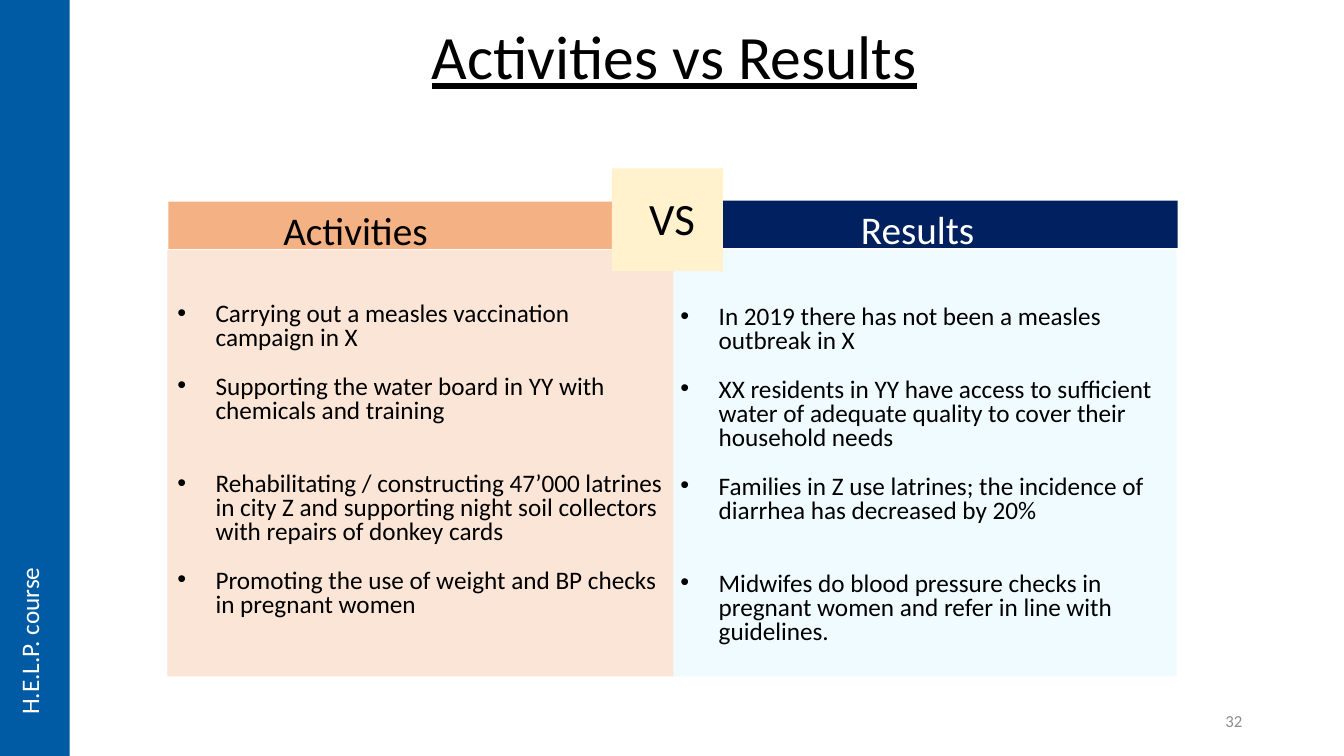
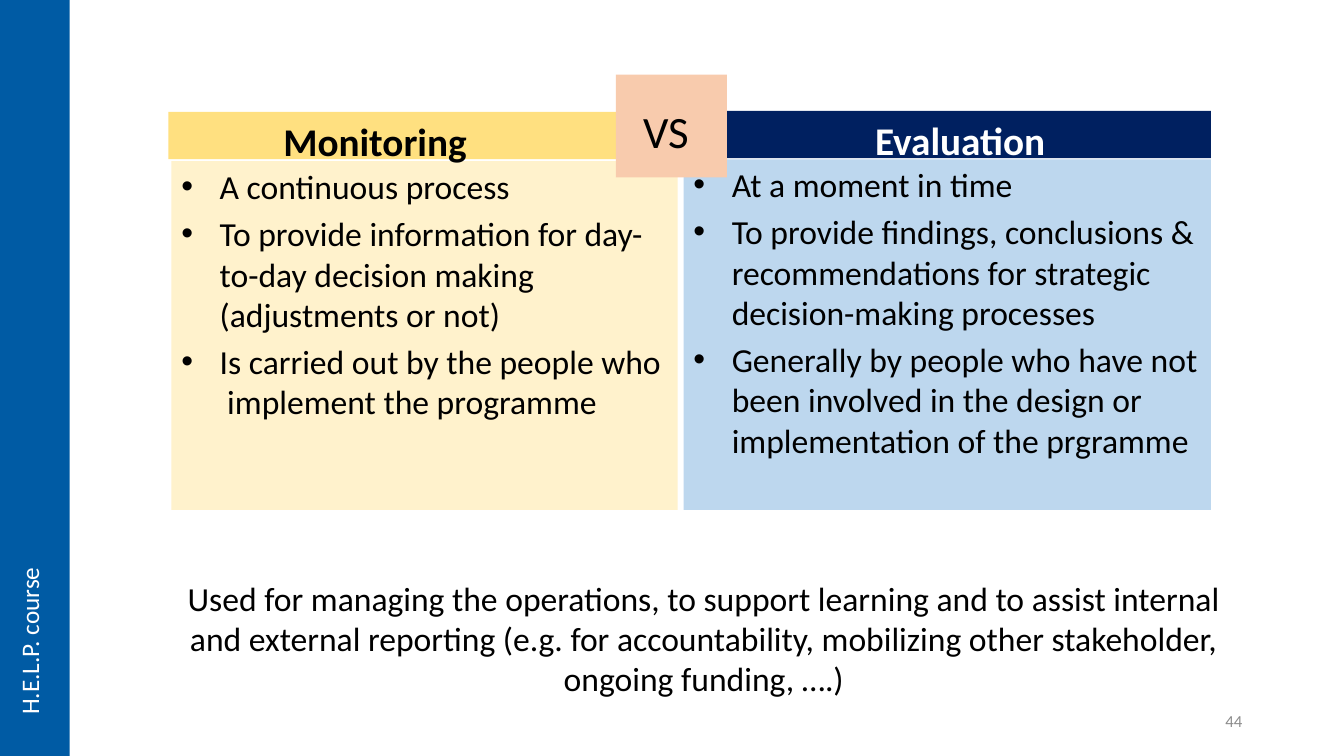
from lxml.etree import SubElement
from pptx import Presentation
from pptx.dml.color import RGBColor
from pptx.enum.shapes import MSO_SHAPE
from pptx.enum.text import MSO_ANCHOR, PP_ALIGN
from pptx.oxml.ns import qn
from pptx.util import Inches, Pt

WIDTH, HEIGHT = 13.33, 7.5
BLACK, WHITE, GREY = "000000", "FFFFFF", "8C8C8C"
BAND, NAVY = "005BA4", "002060"
FONT = "Calibri"
COURSE = "H.E.L.P. course"
HEADING_HEIGHT = 0.47
INDENT = 0.38
BADGE_SIZE = (1.1, 1.02)
BADGE_TEXT_SIZE = (0.66, 0.64)

SLIDES = [
    {
        "title": "Activities vs Results",
        "number": "32",
        "body": {"size": 18, "line_spacing": 0.8},
        "bold": False,
        "badge": {"at": (6.07, 1.67), "text_at": (6.34, 1.84), "fill": "FFF2CC"},
        "columns": [
            {
                "heading": ("Activities", (1.67, 2, 5), 1.14, "F4B183", BLACK),
                "panel": ((1.66, 2.48, 5.02, 4.23), "FBE5D6", 0.53),
                "items": [
                    ("Carrying out a measles vaccination campaign in X", 0),
                    ("Supporting the water board in YY with chemicals and training", 17.4),
                    ("Rehabilitating / constructing 47’000 latrines in city Z and supporting "
                     "night soil collectors with repairs of donkey cards", 34.8),
                    ("Promoting the use of weight and BP checks in pregnant women", 17.4),
                ],
            },
            {
                "heading": ("Results", (6.68, 1.99, 5), 1.86, NAVY, WHITE),
                "panel": ((6.65, 2.48, 5.02, 4.23), "EFFBFF", 0.56),
                "items": [
                    ("In 2019 there has not been a measles outbreak in X", 0),
                    ("XX residents in YY have access to sufficient water of adequate "
                     "quality to cover their household needs", 17.4),
                    ("Families in Z use latrines; the incidence of diarrhea has decreased by 20%", 17.4),
                    ("Midwifes do blood pressure checks in pregnant women and refer "
                     "in line with guidelines.", 34.8),
                ],
            },
        ],
    },
    {
        "number": "44",
        "body": {"size": 24, "line_spacing": 1.0},
        "bold": True,
        "badge": {"at": (6.11, 0.74), "text_at": (6.28, 0.98), "fill": "F8CBAD"},
        "columns": [
            {
                "heading": ("Monitoring", (1.67, 1.11, 5), 1.14, "FFE080", BLACK),
                "panel": ((1.7, 1.6, 5.02, 3.46), "FFF2CC", 0.05),
                "items": [
                    ("A continuous process", 0),
                    ("To provide information for day-to-day decision making (adjustments or not)", 4.8),
                    ("Is carried out by the people who  implement the programme", 4.8),
                ],
            },
            {
                "heading": ("Evaluation", (6.82, 1.1, 5.19), 1.86, NAVY, WHITE),
                "panel": ((6.78, 1.58, 5.23, 3.48), "BDD7EE", 0.05),
                "items": [
                    ("At a moment in time", 0),
                    ("To provide findings, conclusions & recommendations for strategic "
                     "decision-making processes", 4.8),
                    ("Generally by people who have not been involved in the design or "
                     "implementation of the prgramme", 4.8),
                ],
            },
        ],
        "summary": "Used for managing the operations, to support learning and to assist internal "
                   "and external reporting (e.g. for accountability, mobilizing other stakeholder, "
                   "ongoing funding, ….)",
    },
]


def color(value):
    return RGBColor.from_string(value)


def add_rectangle(slide, box, fill):
    shape = slide.shapes.add_shape(MSO_SHAPE.RECTANGLE, *map(Inches, box))
    shape.shadow.inherit = False
    shape.fill.solid()
    shape.fill.fore_color.rgb = color(fill)
    shape.line.fill.background()
    shape.text_frame.vertical_anchor = MSO_ANCHOR.TOP
    return shape


def write(paragraph, text, size, font_color=BLACK, align=PP_ALIGN.LEFT, bold=False, underline=False):
    paragraph.alignment = align
    run = paragraph.add_run()
    run.text = text
    run.font.name = FONT
    run.font.size = Pt(size)
    run.font.bold = bold
    run.font.underline = underline
    run.font.color.rgb = color(font_color)


def add_text(slide, box, text, size, wrap=True, anchor=MSO_ANCHOR.TOP, **style):
    frame = slide.shapes.add_textbox(*map(Inches, box)).text_frame
    frame.word_wrap = wrap
    frame.vertical_anchor = anchor
    write(frame.paragraphs[0], text, size, **style)
    return frame


def add_bullet(paragraph):
    properties = paragraph._p.get_or_add_pPr()
    properties.set("marL", str(Inches(INDENT)))
    properties.set("indent", str(-Inches(INDENT)))
    SubElement(properties, qn("a:buFont")).set("typeface", "Arial")
    SubElement(properties, qn("a:buChar")).set("char", "•")


def add_panel(slide, column, body):
    box, fill, top_margin = column["panel"]
    frame = add_rectangle(slide, box, fill).text_frame
    frame.word_wrap = True
    frame.margin_top = Inches(top_margin)
    for index, (text, gap) in enumerate(column["items"]):
        paragraph = frame.add_paragraph() if index else frame.paragraphs[0]
        paragraph.line_spacing = body["line_spacing"]
        paragraph.space_before = Pt(gap)
        add_bullet(paragraph)
        write(paragraph, text, body["size"])


def add_heading(slide, column, bold):
    text, box, left_margin, fill, font_color = column["heading"]
    frame = add_rectangle(slide, (*box, HEADING_HEIGHT), fill).text_frame
    frame.margin_left = Inches(left_margin)
    write(frame.paragraphs[0], text, 28, font_color, bold=bold)


def add_badge(slide, badge):
    add_rectangle(slide, (*badge["at"], *BADGE_SIZE), badge["fill"])
    add_text(slide, (*badge["text_at"], *BADGE_TEXT_SIZE), "VS", 32, wrap=False)


def add_common_parts(slide, number):
    add_rectangle(slide, (0, 0, 0.69, HEIGHT), BAND)
    course = add_text(slide, (0.09, 5.61, 0.5, 1.58), COURSE, 18, wrap=False, font_color=WHITE)
    course._txBody.bodyPr.set("vert", "vert270")
    add_text(slide, (9.42, 6.95, 3, 0.4), number, 12, anchor=MSO_ANCHOR.MIDDLE,
             font_color=GREY, align=PP_ALIGN.RIGHT)


def build_slide(presentation, content):
    slide = presentation.slides.add_slide(presentation.slide_layouts[6])
    add_common_parts(slide, content["number"])
    if "title" in content:
        title = add_text(slide, (2.44, -0.03, 8.5, 1.25), content["title"], 44,
                         anchor=MSO_ANCHOR.MIDDLE, align=PP_ALIGN.CENTER, underline=True)
        title.paragraphs[0].line_spacing = 0.9
    for column in reversed(content["columns"]):
        add_panel(slide, column, content["body"])
    for column in content["columns"]:
        add_heading(slide, column, content["bold"])
    add_badge(slide, content["badge"])
    if "summary" in content:
        add_text(slide, (1.7, 5.68, 10.56, 1.31), content["summary"], 24, align=PP_ALIGN.CENTER)


def main():
    presentation = Presentation()
    presentation.slide_width = Inches(WIDTH)
    presentation.slide_height = Inches(HEIGHT)
    for content in SLIDES:
        build_slide(presentation, content)
    presentation.save("out.pptx")


if __name__ == "__main__":
    main()
